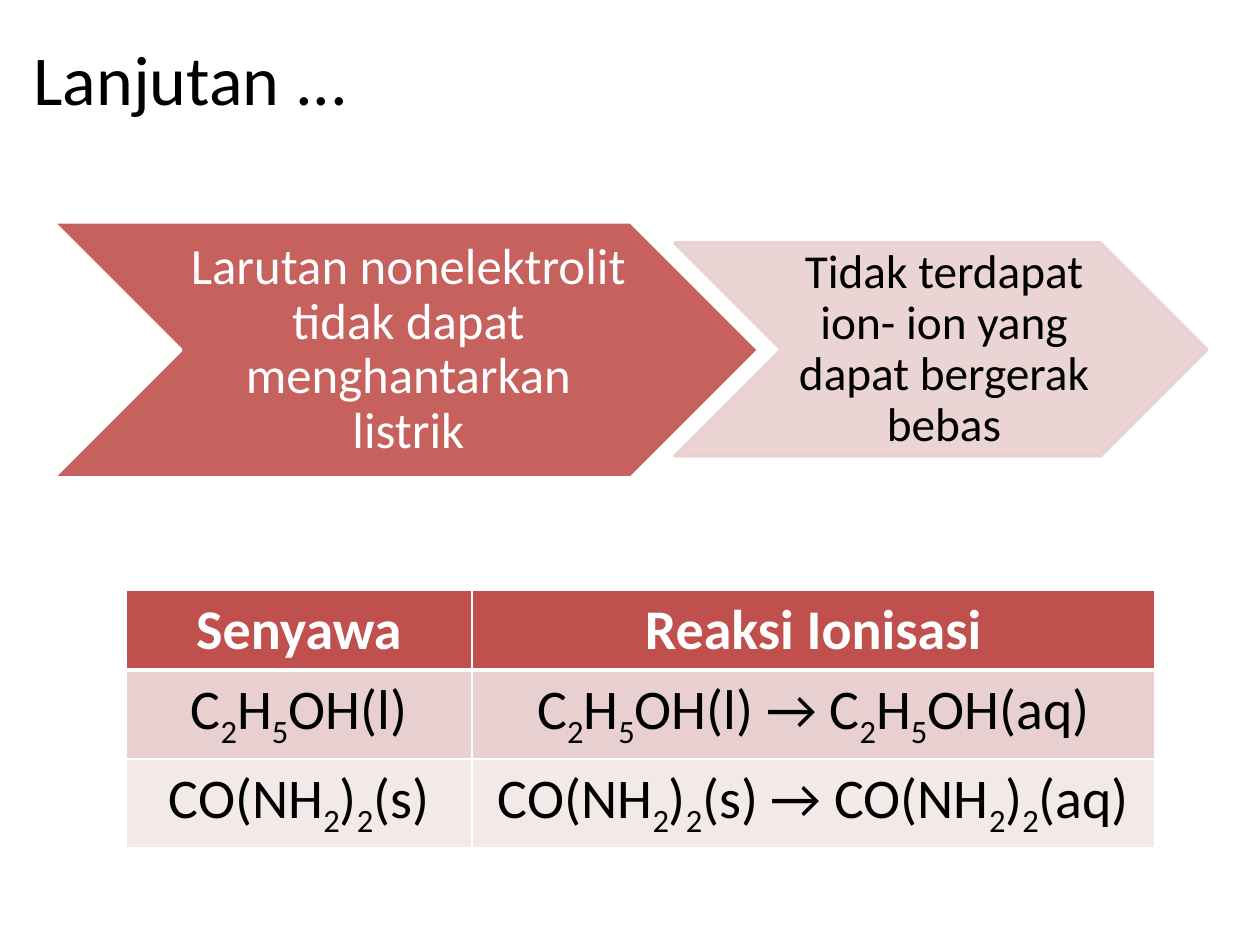
from dataclasses import dataclass
from itertools import groupby

from lxml.etree import SubElement
from pptx import Presentation
from pptx.dml.color import RGBColor
from pptx.enum.shapes import MSO_SHAPE as Preset
from pptx.enum.text import MSO_ANCHOR as Anchor, MSO_AUTO_SIZE as AutoSize, PP_ALIGN as Align
from pptx.oxml.ns import qn
from pptx.util import Emu, Pt

PX_PER_INCH = 126
WHITE, BLACK, RED = "FFFFFF", "000000", "C0504D"
PINK, PALE_PINK = "E8D0D0", "F4E9E9"


def px(length: int) -> Emu:
    return Emu(round(length * 914400 / PX_PER_INCH))


def color(hex_code: str) -> RGBColor:
    return RGBColor.from_string(hex_code)


@dataclass
class Box:
    left: int
    top: int
    width: int
    height: int

    def emu(self) -> tuple:
        return tuple(map(px, (self.left, self.top, self.width, self.height)))


@dataclass
class Step:
    arrow: Box
    label: Box
    text: str
    size: int
    fill: str
    ink: str
    outline: str
    outline_alpha: int


def write(frame, text: str, *, size: int, ink: str, align=Align.CENTER,
          bold: bool = False, spacing: float = 1.0, formula: bool = False) -> None:
    """Write one paragraph; in a formula every digit becomes a subscript."""
    paragraph = frame.paragraphs[0]
    paragraph.alignment = align
    paragraph.line_spacing = spacing
    parts = groupby(text, key=lambda char: formula and char.isdigit())
    for is_subscript, chars in parts:
        run = paragraph.add_run()
        run.text = "".join(chars)
        run.font.name = "Calibri"
        run.font.size = Pt(size)
        run.font.bold = bold
        run.font.color.rgb = color(ink)
        if is_subscript:
            run.font._element.set("baseline", "-25000")


def set_alpha(properties, percent: int) -> None:
    solid = properties.find(qn("a:solidFill"))
    SubElement(solid[0], qn("a:alpha"), val=str(percent * 1000))


def draw_step(slide, step: Step) -> None:
    arrow = slide.shapes.add_shape(Preset.CHEVRON, *step.arrow.emu())
    arrow.shadow.inherit = False
    arrow.fill.solid()
    arrow.fill.fore_color.rgb = color(step.fill)
    arrow.line.color.rgb = color(step.outline)
    arrow.line.width = Pt(2)
    properties = arrow._element.spPr
    set_alpha(properties, 90)
    set_alpha(properties.find(qn("a:ln")), step.outline_alpha)

    frame = slide.shapes.add_textbox(*step.label.emu()).text_frame
    frame.word_wrap = True
    frame.vertical_anchor = Anchor.MIDDLE
    frame.margin_left, frame.margin_right = px(5), 0
    frame.margin_top = frame.margin_bottom = px(3)
    write(frame, step.text, size=step.size, ink=step.ink, spacing=0.9)


def add_border(cell, side: str, points: int) -> None:
    line = SubElement(cell._tc.get_or_add_tcPr(), qn(f"a:ln{side}"), w=str(Pt(points)))
    solid = SubElement(line, qn("a:solidFill"))
    SubElement(solid, qn("a:srgbClr"), val=WHITE)


def draw_reactions(slide, box: Box, widths: list[int], rows: list[tuple], fills: list[str]) -> None:
    table = slide.shapes.add_table(len(rows), len(widths), *box.emu()).table
    for column, width in zip(table.columns, widths):
        column.width = px(width)
    for r, (row, fill) in enumerate(zip(rows, fills)):
        is_header = r == 0
        for c, text in enumerate(row):
            cell = table.cell(r, c)
            for side in "LRTB":
                below_header = (is_header and side == "B") or (r == 1 and side == "T")
                add_border(cell, side, 3 if below_header else 1)
            cell.fill.solid()
            cell.fill.fore_color.rgb = color(fill)
            write(cell.text_frame, text, size=32, ink=WHITE if is_header else BLACK,
                  bold=is_header, formula=not is_header)


STEPS = [
    Step(Box(53, 222, 706, 256), Box(181, 222, 450, 256),
         "Larutan nonelektrolit tidak dapat menghantarkan listrik",
         29, RED, WHITE, WHITE, 100),
    Step(Box(675, 243, 532, 213), Box(782, 243, 319, 213),
         "Tidak terdapat ion- ion yang dapat bergerak bebas",
         27, PINK, BLACK, PINK, 90),
]

REACTIONS = [
    ("Senyawa", "Reaksi Ionisasi"),
    ("C2H5OH(l)", "C2H5OH(l) → C2H5OH(aq)"),
    ("CO(NH2)2(s)", "CO(NH2)2(s) → CO(NH2)2(aq)"),
]


def main() -> None:
    deck = Presentation()
    deck.slide_width, deck.slide_height = px(1260), px(945)
    slide = deck.slides.add_slide(deck.slide_layouts[5])

    # Title
    title = slide.shapes.title
    title.left, title.top, title.width, title.height = Box(21, 29, 368, 97).emu()
    title.text_frame.vertical_anchor = Anchor.TOP
    title.text_frame.auto_size = AutoSize.SHAPE_TO_FIT_TEXT
    write(title.text_frame, "Lanjutan ...", size=40, ink=BLACK, align=Align.LEFT)

    # Cause and explanation arrows
    for step in STEPS:
        draw_step(slide, step)

    # Ionisation reactions
    draw_reactions(slide, Box(126, 590, 1029, 228), [346, 683], REACTIONS,
                   [RED, PINK, PALE_PINK])

    deck.save("out.pptx")


if __name__ == "__main__":
    main()
